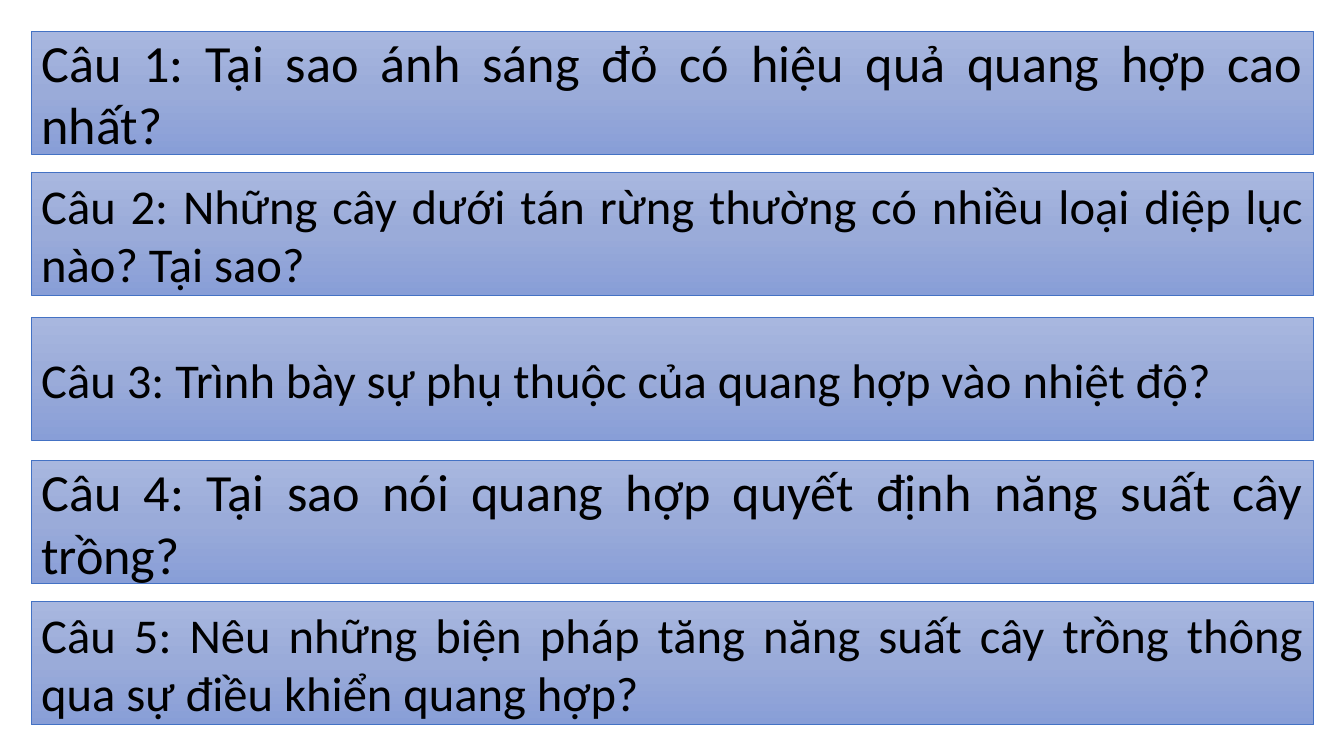
from copy import deepcopy

from pptx import Presentation
from pptx.dml.color import RGBColor
from pptx.enum.shapes import MSO_SHAPE
from pptx.enum.text import MSO_ANCHOR, PP_ALIGN
from pptx.oxml.ns import qn
from pptx.util import Inches, Pt

LARGE, SMALL = 37.3, 34.7
QUESTIONS = [
    (0.31, LARGE, "Câu 1: Tại sao ánh sáng đỏ có hiệu quả quang hợp cao nhất?"),
    (1.71, SMALL, "Câu 2: Những cây dưới tán rừng thường có nhiều loại diệp lục nào? Tại sao?"),
    (3.15, SMALL, "Câu 3: Trình bày sự phụ thuộc của quang hợp vào nhiệt độ?"),
    (4.57, LARGE, "Câu 4: Tại sao nói quang hợp quyết định năng suất cây trồng?"),
    (5.97, SMALL, "Câu 5: Nêu những biện pháp tăng năng suất cây trồng thông qua sự điều khiển quang hợp?"),
]
LEFT, WIDTH, HEIGHT = 0.31, 12.72, 1.22
BLACK = RGBColor(0x00, 0x00, 0x00)
BORDER = RGBColor(0x44, 0x72, 0xC4)
GRADIENT = [
    (0, RGBColor(0xA8, 0xB7, 0xDF)),
    (0.5, RGBColor(0x9A, 0xAB, 0xD9)),
    (1, RGBColor(0x88, 0x9E, 0xD7)),
]


def fill_downwards(shape):
    shape.fill.gradient()
    shape.fill.gradient_angle = 270
    stop_list = shape._element.spPr.find(".//" + qn("a:gsLst"))
    stop_list.append(deepcopy(stop_list[0]))
    for stop, (position, color) in zip(shape.fill.gradient_stops, GRADIENT):
        stop.position = position
        stop.color.rgb = color


def add_question(page, top, size, text):
    box = page.shapes.add_shape(
        MSO_SHAPE.RECTANGLE, Inches(LEFT), Inches(top), Inches(WIDTH), Inches(HEIGHT)
    )
    box.shadow.inherit = False
    fill_downwards(box)
    box.line.color.rgb = BORDER
    box.line.width = Pt(0.5)
    frame = box.text_frame
    frame.word_wrap = True
    frame.vertical_anchor = MSO_ANCHOR.MIDDLE
    frame.text = text
    para = frame.paragraphs[0]
    para.alignment = PP_ALIGN.JUSTIFY
    font = para.runs[0].font
    font.name = "Calibri"
    font.size = Pt(size)
    font.color.rgb = BLACK


def main():
    deck = Presentation()
    deck.slide_width, deck.slide_height = Inches(13.33), Inches(7.5)
    page = deck.slides.add_slide(deck.slide_layouts[6])
    for question in QUESTIONS:
        add_question(page, *question)
    deck.save("out.pptx")


if __name__ == "__main__":
    main()
